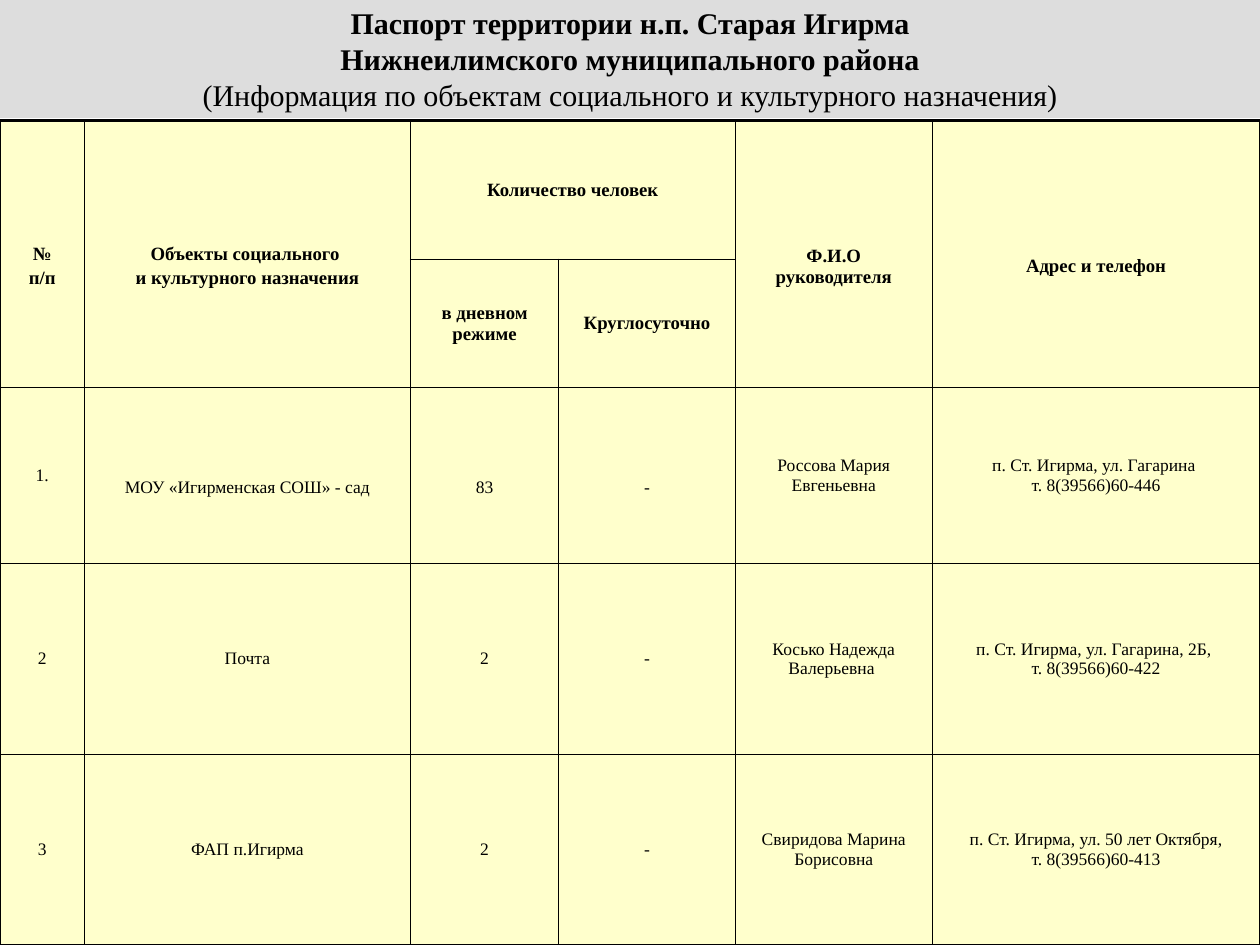
"""Build the passport slide listing the social and cultural facilities of a settlement."""
from dataclasses import dataclass

from lxml.etree import SubElement
from pptx import Presentation
from pptx.dml.color import RGBColor
from pptx.enum.shapes import MSO_SHAPE
from pptx.enum.text import MSO_ANCHOR, PP_ALIGN
from pptx.oxml.ns import qn
from pptx.table import Table, _Cell as Cell
from pptx.util import Inches, Pt

FONT = "Times New Roman"
BLACK, GREY, CREAM = "000000", "DDDDDD", "FFFFCC"
COLUMN_WIDTHS = [0.94, 3.62, 1.65, 1.96, 2.19, 3.64]
ROW_HEIGHTS = [1.54, 1.43, 1.95, 2.12, 2.12]
THIN, THICK = 1, 2.25


@dataclass(frozen=True)
class Entry:
    row: int
    column: int
    lines: tuple[str, ...]
    row_span: int = 1
    column_span: int = 1
    lead: float = 0
    size: float = 14
    bold: bool = False
    gap: float = 3


@dataclass(frozen=True)
class Facility:
    number: str
    title: str
    day_count: str
    head: str
    address: tuple[str, str]
    lead: float = 0


HEADINGS = [
    Entry(0, 0, ("№", "п/п"), 2, 1, 0.27, 15, True),
    Entry(0, 1, ("Объекты социального ", "и культурного назначения"), 2, 1, 0.27, 15, True),
    Entry(0, 2, ("Количество человек",), 1, 2, 0, 15, True),
    Entry(0, 4, ("Ф.И.О руководителя",), 2, 1, 0.27, 15, True),
    Entry(0, 5, ("Адрес и телефон",), 2, 1, 0.27, 15, True),
    Entry(1, 2, ("в дневном режиме",), size=15, bold=True),
    Entry(1, 3, ("Круглосуточно",), size=15, bold=True),
]
FACILITIES = [
    Facility("1.", "МОУ «Игирменская СОШ» - сад", "83", "Россова Мария Евгеньевна",
             ("п. Ст. Игирма, ул. Гагарина ", "т. 8(39566)60-446"), 0.26),
    Facility("2", "Почта", "2", "Косько Надежда Валерьевна ",
             ("п. Ст. Игирма, ул. Гагарина, 2Б, ", "т. 8(39566)60-422")),
    Facility("3", "ФАП п.Игирма", "2", "Свиридова Марина Борисовна",
             ("п. Ст. Игирма, ул. 50 лет Октября,", "т. 8(39566)60-413")),
]
TITLE = [
    ("Паспорт территории н.п. Старая Игирма", True),
    ("Нижнеилимского муниципального района", True),
    ("(Информация по объектам социального и культурного назначения)", False),
]


def color(value: str) -> RGBColor:
    return RGBColor.from_string(value)


def write_line(frame, index: int, text: str, size: float, bold: bool, gap: float = 0) -> None:
    paragraph = frame.paragraphs[0] if index == 0 else frame.add_paragraph()
    paragraph.alignment = PP_ALIGN.CENTER
    paragraph.space_before = Pt(gap)
    run = paragraph.add_run()
    run.text = text
    run.font.name = FONT
    run.font.size = Pt(size)
    run.font.bold = bold
    run.font.color.rgb = color(BLACK)


def style_cell(cell: Cell, row: int, column: int) -> None:
    last_column = column == len(COLUMN_WIDTHS) - 1
    widths = {
        "a:lnL": THICK if column == 0 else THIN,
        "a:lnR": THICK if last_column else THIN,
        "a:lnT": THICK if row == 0 else THIN,
        "a:lnB": THIN,
    }
    properties = cell._tc.get_or_add_tcPr()
    for side, width in widths.items():
        line = SubElement(properties, qn(side), w=str(Pt(width)))
        SubElement(SubElement(line, qn("a:solidFill")), qn("a:srgbClr"), val=BLACK)
    cell.fill.solid()
    cell.fill.fore_color.rgb = color(CREAM)
    cell.vertical_anchor = MSO_ANCHOR.MIDDLE
    cell.margin_left = cell.margin_right = Inches(0.14)
    cell.margin_top = cell.margin_bottom = Inches(0.07)


def fill_entry(table: Table, entry: Entry) -> None:
    cell = table.cell(entry.row, entry.column)
    if entry.row_span * entry.column_span > 1:
        cell.merge(table.cell(entry.row + entry.row_span - 1,
                              entry.column + entry.column_span - 1))
    cell.margin_top = Inches(0.07 + entry.lead)
    for index, text in enumerate(entry.lines):
        write_line(cell.text_frame, index, text, entry.size, entry.bold, entry.gap)


def facility_entries(row: int, facility: Facility) -> list[Entry]:
    lead = facility.lead
    return [
        Entry(row, 0, (facility.number,)),
        Entry(row, 1, (facility.title,), lead=lead),
        Entry(row, 2, (facility.day_count,), lead=lead),
        Entry(row, 3, ("-",), lead=lead),
        Entry(row, 4, (facility.head,)),
        Entry(row, 5, facility.address, gap=0),
    ]


def add_title(slide) -> None:
    banner = slide.shapes.add_shape(MSO_SHAPE.RECTANGLE, 0, 0, Inches(14), Inches(1.31))
    banner.shadow.inherit = False
    banner.fill.solid()
    banner.fill.fore_color.rgb = color(GREY)
    banner.line.fill.background()
    banner.text_frame.word_wrap = True
    for index, (text, bold) in enumerate(TITLE):
        write_line(banner.text_frame, index, text, 24, bold)


def add_facility_table(slide) -> None:
    table = slide.shapes.add_table(len(ROW_HEIGHTS), len(COLUMN_WIDTHS), 0, Inches(1.34),
                                   Inches(14), Inches(9.15)).table
    table.first_row = table.horz_banding = False
    for column, width in zip(table.columns, COLUMN_WIDTHS):
        column.width = Inches(width)
    for row, height in zip(table.rows, ROW_HEIGHTS):
        row.height = Inches(height)
    for row in range(len(ROW_HEIGHTS)):
        for column in range(len(COLUMN_WIDTHS)):
            style_cell(table.cell(row, column), row, column)
    entries = list(HEADINGS)
    for row, facility in enumerate(FACILITIES, start=2):
        entries += facility_entries(row, facility)
    for entry in entries:
        fill_entry(table, entry)


def main() -> None:
    presentation = Presentation()
    presentation.slide_width = Inches(14)
    presentation.slide_height = Inches(10.5)
    slide = presentation.slides.add_slide(presentation.slide_layouts[6])
    add_title(slide)
    add_facility_table(slide)
    presentation.save("out.pptx")


if __name__ == "__main__":
    main()
